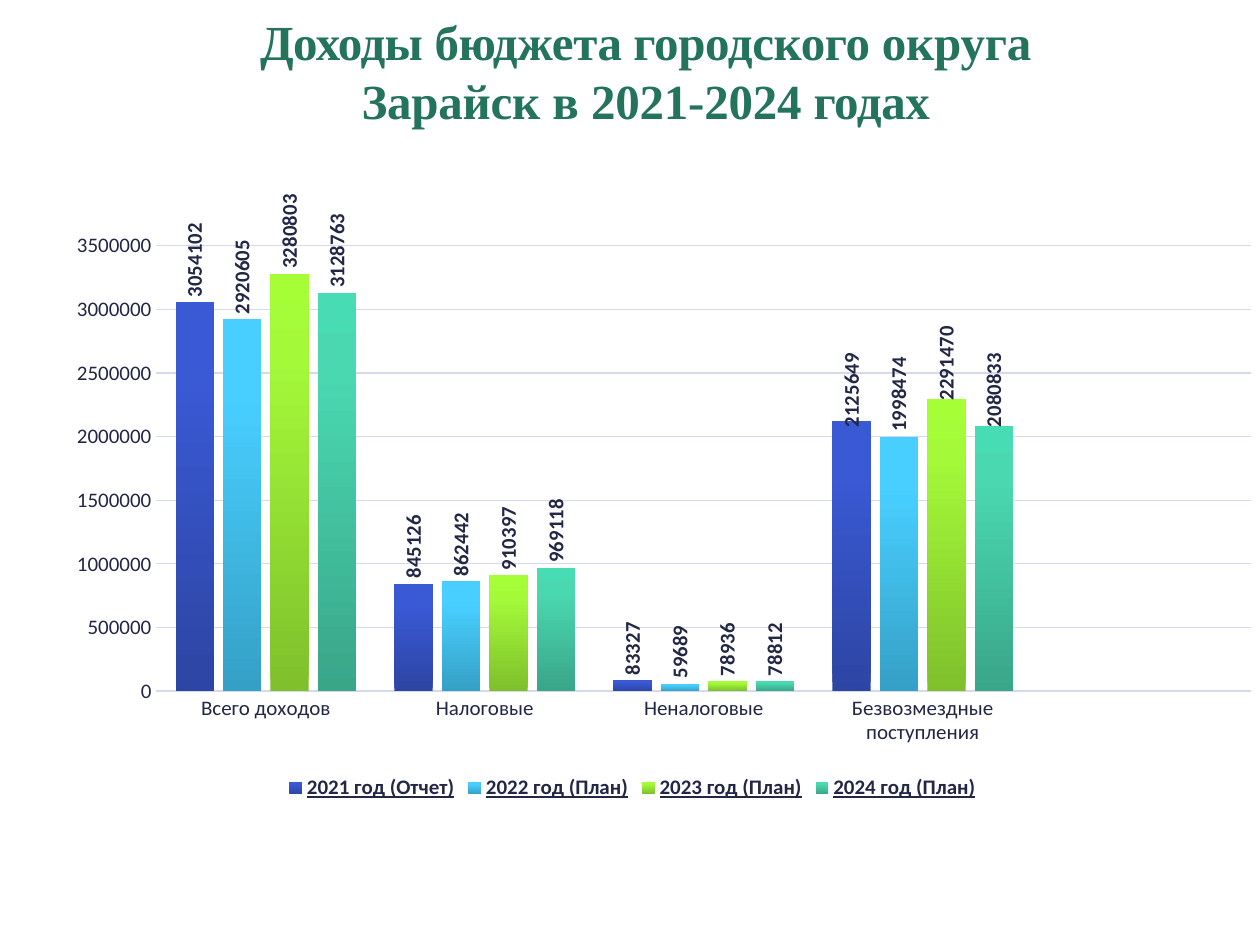
from lxml import etree
from pptx import Presentation
from pptx.chart.data import CategoryChartData
from pptx.dml.color import RGBColor
from pptx.enum.chart import (XL_CHART_TYPE, XL_LABEL_POSITION,
                             XL_LEGEND_POSITION, XL_TICK_MARK)
from pptx.enum.text import MSO_ANCHOR, MSO_AUTO_SIZE, PP_ALIGN
from pptx.oxml import parse_xml
from pptx.oxml.ns import nsdecls, qn
from pptx.util import Inches, Pt

COLUMNS = XL_CHART_TYPE.COLUMN_CLUSTERED
OUTSIDE_END = XL_LABEL_POSITION.OUTSIDE_END
BOTTOM = XL_LEGEND_POSITION.BOTTOM
NO_TICK = XL_TICK_MARK.NONE
TITLE_ONLY = 5

GREEN = RGBColor(0x23, 0x73, 0x5D)
NAVY = RGBColor(0x21, 0x27, 0x45)
GRID = RGBColor(0xD6, 0xD9, 0xEB)

# Title pieces with their letter spacing in points
TITLE = [("Доходы ", -0.3), ("бюджета городского ", -0.2),
         ("округа\nЗарайск ", -0.1), ("в ", 0),
         ("2021-2024 ", -0.1), ("годах", -0.2)]
TITLE_FONT = {"name": "Times New Roman", "size": Pt(28), "bold": True}
CHART_FONT = {"name": "Calibri", "size": Pt(12), "bold": False}
LABEL_FONT = {**CHART_FONT, "bold": True}
LEGEND_FONT = {**LABEL_FONT, "underline": True}

# The last category is an empty slot on the right
CATEGORIES = ["Всего доходов", "Налоговые", "Неналоговые",
              "Безвозмездные поступления", ""]
GRANTS = 3
# Name, values, gradient from bottom to top, shift of the grants label
YEARS = [
    ("2021 год (Отчет)", (3054102, 845126, 83327, 2125649, None),
     ("2D45A3", "3A59D4", "3758D7"), (0, 0.02)),
    ("2022 год (План)", (2920605, 862442, 59689, 1998474, None),
     ("35A0C6", "48CFFF", "49CFFF"), (0, 0)),
    ("2023 год (План)", (3280803, 910397, 78936, 2291470, None),
     ("7FC02C", "A4F939", "A6FE36"), (0, 0.01)),
    ("2024 год (План)", (3128763, 969118, 78812, 2080833, None),
     ("39A688", "4AD8B1", "47DCB3"), (0, 0.01)),
]
STOPS = (0, 80, 100)


def set_font(font, formats, color):
    for key, value in formats.items():
        setattr(font, key, value)
    font.color.rgb = color


def set_line(line, color, width):
    line.color.rgb = color
    line.width = width


def make_layout(**values):
    """Manual chart layout from its fractions and modes."""
    layout = parse_xml(f"<c:layout {nsdecls('c')}><c:manualLayout/></c:layout>")
    for tag, value in values.items():
        etree.SubElement(layout[0], qn(f"c:{tag}")).set("val", str(value))
    return layout


def add_title(slide):
    title = slide.shapes.title
    title.left, title.top = Inches(0.28), Inches(-0.11)
    title.width, title.height = Inches(9.69), Inches(1.34)
    frame = title.text_frame
    frame.auto_size = MSO_AUTO_SIZE.NONE
    frame.vertical_anchor = MSO_ANCHOR.MIDDLE
    paragraph = frame.paragraphs[0]
    paragraph.alignment = PP_ALIGN.CENTER
    for words, spacing in TITLE:
        # A line feed inside a piece becomes a line break
        for number, part in enumerate(words.split("\n")):
            if number:
                paragraph.add_line_break()
            run = paragraph.add_run()
            run.text = part
            set_font(run.font, TITLE_FONT, GREEN)
            run.font._element.set("spc", str(round(spacing * 100)))


def fill_gradient(series, colors):
    stops = "".join(
        f'<a:gs pos="{stop * 1000}"><a:srgbClr val="{color}"/></a:gs>'
        for stop, color in zip(STOPS, colors))
    series.format._element.get_or_add_spPr().insert(0, parse_xml(
        f'<a:gradFill {nsdecls("a")} rotWithShape="1"><a:gsLst>{stops}'
        '</a:gsLst><a:lin ang="16200000" scaled="0"/></a:gradFill>'))


def label_series(series, shift):
    labels = series.data_labels
    labels.show_value = True
    grants_label = series.points[GRANTS].data_label
    for label in (labels, grants_label):
        set_font(label.font, LABEL_FONT, NAVY)
        label.position = OUTSIDE_END
    # Turn every label upright along its column
    for body in series._element.xpath("./c:dLbls//a:bodyPr"):
        body.set("rot", "-5400000")
        body.set("vert", "horz")
    if any(shift):
        index = series._element.xpath("./c:dLbls/c:dLbl/c:idx")[0]
        index.addnext(make_layout(x=shift[0], y=shift[1]))


def format_axes(chart):
    category_axis, value_axis = chart.category_axis, chart.value_axis
    for axis in (category_axis, value_axis):
        axis.major_tick_mark = axis.minor_tick_mark = NO_TICK
        set_font(axis.tick_labels.font, CHART_FONT, NAVY)
    set_line(category_axis.format.line, GRID, Pt(0.75))
    value_axis.format.line.fill.background()
    value_axis.minimum_scale, value_axis.maximum_scale = 0, 3500000
    value_axis.major_unit = 500000
    set_line(value_axis.major_gridlines.format.line, GRID, Pt(0.75))


def add_income_chart(slide):
    data = CategoryChartData(number_format="General")
    data.categories = CATEGORIES
    for name, values, _, _ in YEARS:
        data.add_series(name, values)
    chart = slide.shapes.add_chart(
        COLUMNS, Inches(0.1), Inches(1.55), Inches(9.84), Inches(4.84),
        data).chart
    chart.has_title = False
    set_font(chart.font, CHART_FONT, NAVY)

    # Columns
    plot = chart.plots[0]
    plot.gap_width, plot.overlap = 100, -24
    plot.vary_by_categories = False
    for series, (_, _, colors, shift) in zip(plot.series, YEARS):
        fill_gradient(series, colors)
        label_series(series, shift)
    format_axes(chart)

    # Legend
    chart.has_legend = True
    chart.legend.position = BOTTOM
    chart.legend.include_in_layout = False
    set_font(chart.legend.font, LEGEND_FONT, NAVY)

    # Inner plot area
    plot_area = chart._chartSpace.chart.plotArea
    for old_layout in plot_area.findall(qn("c:layout")):
        plot_area.remove(old_layout)
    plot_area.insert(0, make_layout(
        layoutTarget="inner", xMode="edge", yMode="edge",
        x=0.116, y=0.067, w=0.883, h=0.743))


def main():
    deck = Presentation()
    deck.slide_width, deck.slide_height = Inches(10), Inches(7.5)
    slide = deck.slides.add_slide(deck.slide_layouts[TITLE_ONLY])
    add_title(slide)
    add_income_chart(slide)
    deck.save("out.pptx")


if __name__ == "__main__":
    main()
